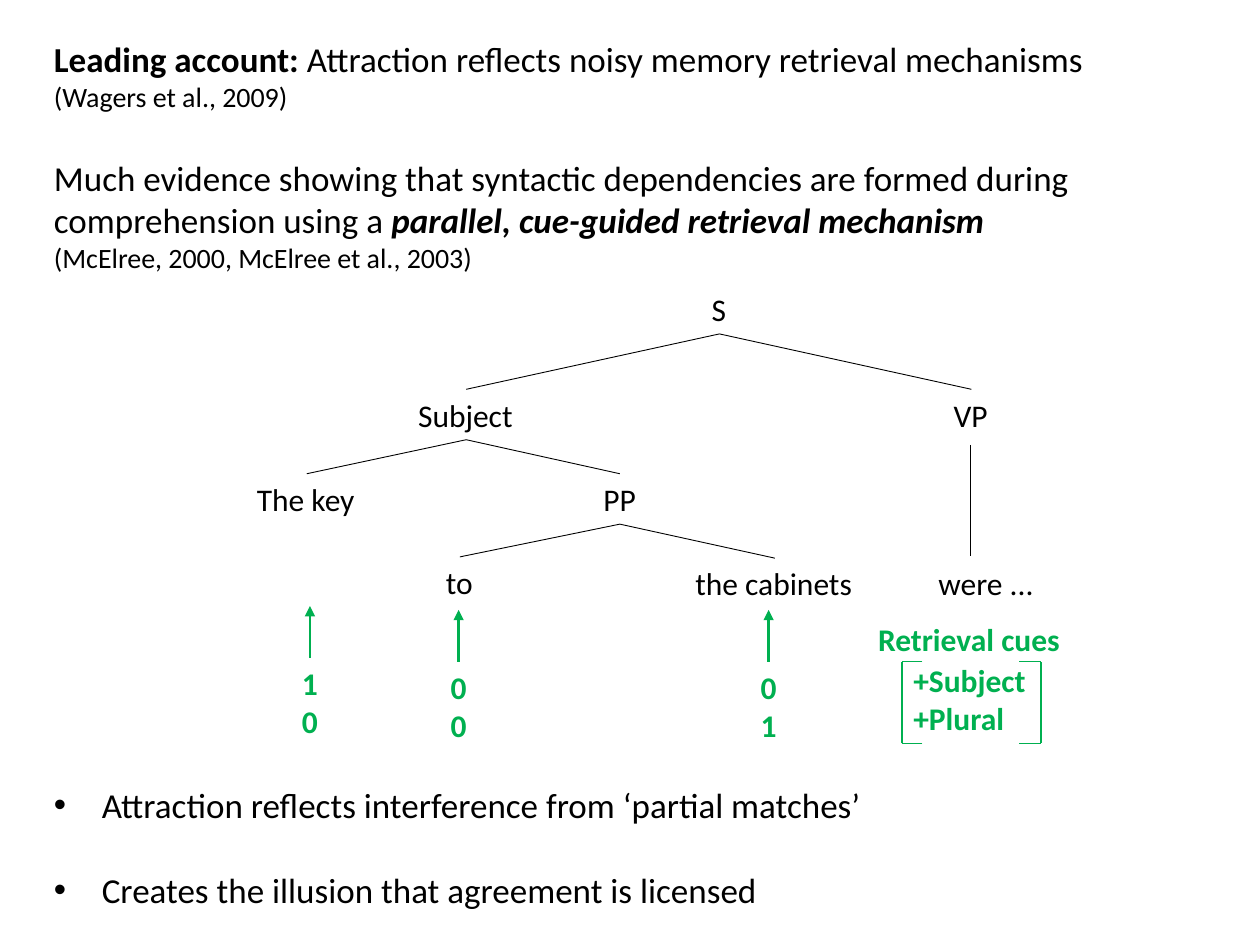
from lxml import etree
from pptx import Presentation
from pptx import util as u
from pptx.dml.color import RGBColor
from pptx.enum import shapes, text
from pptx.oxml.ns import qn

Inches, Pt = u.Inches, u.Pt
BLACK, GREEN = "000000", "00B050"
TOP, BOTTOM = 0, 2


def rgb(value):
    return RGBColor.from_string(value)


def add_span(para, words, size=18, color=BLACK, bold=False, italic=False):
    span = para.add_run()
    span.text = words
    font = span.font
    font.name, font.size = "Calibri", Pt(size)
    font.bold, font.italic = bold, italic
    font.color.rgb = rgb(color)


def add_box(page, left, top, width, height, paras, wrap=False, align=None, gaps=()):
    """Each paragraph is a list of (words, format) spans; gaps maps index to points before."""
    box = page.shapes.add_textbox(*map(Inches, (left, top, width, height)))
    frame = box.text_frame
    frame.word_wrap = wrap
    frame.auto_size = text.MSO_AUTO_SIZE.SHAPE_TO_FIT_TEXT
    for index, spans in enumerate(paras):
        para = frame.paragraphs[0] if index == 0 else frame.add_paragraph()
        para.alignment = align
        if index in gaps:
            para.space_before = Pt(gaps[index])
        for words, style in spans:
            add_span(para, words, **style)
    return box


def add_label(page, left, top, width, *lines, height=0.4, align=None, **style):
    paras = [[(line, style)] for line in lines]
    return add_box(page, left, top, width, height, paras, align=align)


def add_bullets(box):
    for para in box.text_frame.paragraphs:
        props = para._p.get_or_add_pPr()
        props.set("marL", str(Inches(0.38)))
        props.set("indent", str(-Inches(0.38)))
        etree.SubElement(props, qn("a:buFont")).set("typeface", "Arial")
        etree.SubElement(props, qn("a:buChar")).set("char", "•")


def add_line(page, start, end, color=BLACK, width=0.5, arrow=False):
    line = page.shapes.add_connector(
        shapes.MSO_CONNECTOR.STRAIGHT, *map(Inches, (*start, *end)))
    line.line.color.rgb = rgb(color)
    line.line.width = Pt(width)
    if arrow:
        etree.SubElement(line.line._get_or_add_ln(), qn("a:tailEnd")).set("type", "triangle")
    etree.SubElement(line._element.spPr, qn("a:effectLst"))
    return line


def add_claims(page):
    large, small = {"size": 20}, {"size": 16}
    add_box(page, 0.33, 0.25, 9.67, 1.99, [
        [("Leading account: ", {"size": 20, "bold": True}),
         ("Attraction reflects noisy memory retrieval mechanisms", large)],
        [("(Wagers et al., 2009)", small)],
        [("Much evidence showing that syntactic dependencies are formed during "
          "comprehension using a ", large),
         ("parallel, cue-guided retrieval mechanism",
          {"size": 20, "bold": True, "italic": True})],
        [("(McElree, 2000, McElree et al., 2003)", small)],
    ], wrap=True, gaps={2: 24.4})
    add_bullets(add_box(page, 0.33, 6.17, 9.67, 1.11, [
        [("Attraction reflects interference from ‘partial matches’", large)],
        [("Creates the illusion that agreement is licensed", large)],
    ], wrap=True, gaps={1: 24.4}))


def add_tree(page):
    # Nodes: words, left, top, width
    nodes = {words: add_label(page, left, top, width, words) for words, left, top, width in [
        ("S", 5.55, 2.25, 0.32), ("Subject", 3.22, 3.09, 0.96),
        ("VP", 7.47, 3.09, 0.48), ("PP", 4.69, 3.76, 0.46),
        ("The key", 1.94, 3.76, 0.99), ("to", 3.44, 4.42, 0.42),
        ("the cabinets", 5.42, 4.43, 1.46), ("were ...", 7.35, 4.43, 0.96)]}

    # Branches from parent to child
    for parent, child in [("S", "Subject"), ("S", "VP"), ("Subject", "The key"),
                          ("Subject", "PP"), ("PP", "to"), ("PP", "the cabinets")]:
        branch = add_line(page, (0, 0), (1, 1))
        branch.begin_connect(nodes[parent], BOTTOM)
        branch.end_connect(nodes[child], TOP)
    add_line(page, (7.7, 3.53), (7.7, 4.41))


def add_matches(page):
    # Feature values, each with an arrow up to its word
    for center, top, values in [(2.46, 5.22, "10"), (3.64, 5.25, "00"), (6.1, 5.25, "01")]:
        box = add_label(page, center - 0.165, top, 0.33, *values, height=0.71,
                        align=text.PP_ALIGN.CENTER, color=GREEN, bold=True)
        arrow = add_line(page, (center, top), (center, top - 0.41), GREEN, 1.5, arrow=True)
        arrow.begin_connect(box, TOP)


def add_cues(page):
    add_label(page, 6.87, 4.87, 1.65, "Retrieval cues", color=GREEN, bold=True)
    add_label(page, 7.15, 5.2, 1.1, "+Subject", "+Plural", height=0.71,
              color=GREEN, bold=True)
    # Square brackets
    top, bottom = 5.25, 5.9
    for side, tip in [(7.16, 7.32), (8.26, 8.09)]:
        add_line(page, (side, bottom), (side, top), GREEN, 1)
        for level in (top, bottom):
            add_line(page, (tip, level), (side, level), GREEN, 1)


def main():
    deck = Presentation()
    deck.slide_width, deck.slide_height = Inches(10), Inches(7.5)
    page = deck.slides.add_slide(deck.slide_layouts[6])
    add_claims(page)
    add_tree(page)
    add_matches(page)
    add_cues(page)
    deck.save("out.pptx")


if __name__ == "__main__":
    main()
